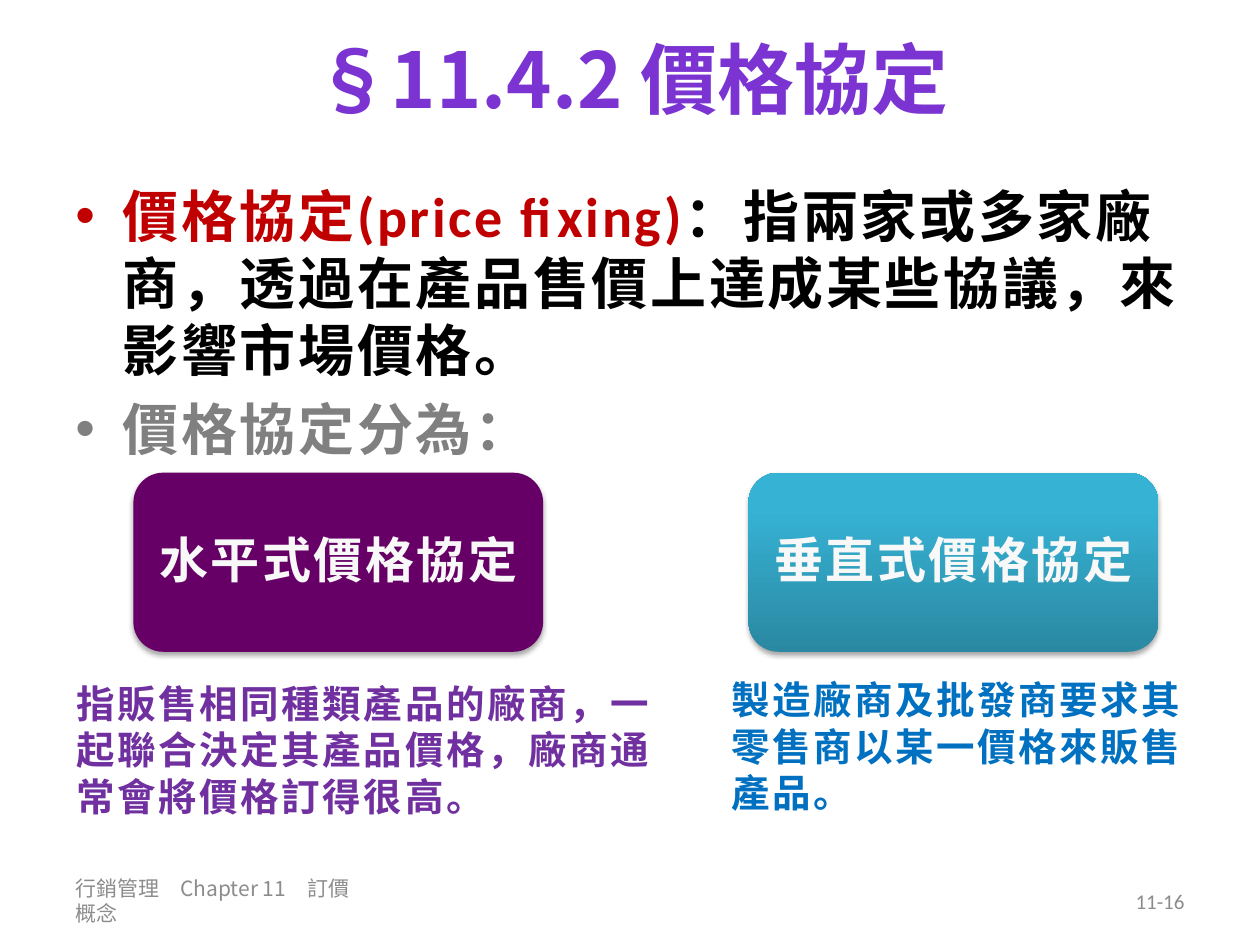
from lxml import etree
from pptx import Presentation
from pptx import util as u
from pptx.dml.color import RGBColor
from pptx.enum import shapes, text
from pptx.oxml import ns

CJK = "Noto Sans CJK SC"
LATIN = "Calibri"


def color(hex_value):
    return RGBColor.from_string(hex_value)


def format_run(run, size, hex_value, latin=LATIN, bold=True, spacing=1.5):
    run.font.size = u.Pt(size)
    run.font.bold = bold
    run.font.name = latin
    run.font.color.rgb = color(hex_value)
    properties = run._r.get_or_add_rPr()
    etree.SubElement(properties, ns.qn("a:ea"), typeface=CJK)
    if spacing:
        properties.set("spc", str(int(spacing * 100)))


presentation = Presentation()
presentation.slide_width = u.Cm(25.4)
presentation.slide_height = u.Cm(19.05)
slide = presentation.slides.add_slide(presentation.slide_layouts[6])

# Title, footer, page number and the two explanations:
# position, text, size, colour, latin font, bold, spacing, alignment, anchor
left, center, right = text.PP_ALIGN.LEFT, text.PP_ALIGN.CENTER, text.PP_ALIGN.RIGHT
top, middle = text.MSO_ANCHOR.TOP, text.MSO_ANCHOR.MIDDLE
text_boxes = [
    ((1.3, 0, 22.86, 3.12), "§11.4.2 價格協定",
     44, "7B34D2", CJK, True, 0, center, middle),
    ((1.27, 17.65, 6.22, 1.02), "行銷管理　Chapter 11　訂價概念",
     12, "8C8C8C", CJK, False, 0, left, middle),
    ((18.21, 17.65, 5.92, 1.02), "11-16",
     12, "8C8C8C", LATIN, False, 0, right, middle),
    ((1.3, 13.59, 12.7, 3.07), "指販售相同種類產品的廠商，一起聯合決定其產品價格，廠商通常會將價格訂得很高。",
     22, "7030A0", LATIN, True, 1.5, left, top),
    ((14.5, 13.51, 10.39, 3.07), "製造廠商及批發商要求其零售商以某一價格來販售產品。",
     22, "0070C0", LATIN, True, 1.5, left, top),
]
for position, words, size, hex_value, latin, bold, spacing, alignment, anchor in text_boxes:
    box = slide.shapes.add_textbox(*map(u.Cm, position))
    frame = box.text_frame
    frame.word_wrap = True
    frame.vertical_anchor = anchor
    frame.text = words
    paragraph = frame.paragraphs[0]
    paragraph.alignment = alignment
    format_run(paragraph.runs[0], size, hex_value, latin, bold, spacing)

# Bulleted definition
bullets = [
    [("價格協定(price fixing)", "C00000"),
     ("：指兩家或多家廠商，透過在產品售價上達成某些協議，來影響市場價格。", "000000")],
    [("價格協定分為：", "808080")],
]
body = slide.shapes.add_textbox(u.Cm(1.27), u.Cm(3.53), u.Cm(22.86), u.Cm(6.4))
frame = body.text_frame
frame.word_wrap = True
for index, parts in enumerate(bullets):
    paragraph = frame.add_paragraph() if index else frame.paragraphs[0]
    if index:
        paragraph.space_before = u.Pt(6.4)
    properties = paragraph._p.get_or_add_pPr()
    properties.set("marL", str(u.Cm(0.95)))
    properties.set("indent", str(-u.Cm(0.95)))
    etree.SubElement(properties, ns.qn("a:buFont"), typeface="Arial")
    etree.SubElement(properties, ns.qn("a:buChar"), char="•")
    for words, hex_value in parts:
        run = paragraph.add_run()
        run.text = words
        format_run(run, 32, hex_value)

# Cards for the two kinds; two colours make a gradient from bottom to top
cards = [
    (2.69, "水平式價格協定", ["660066"]),
    (15.09, "垂直式價格協定", ["2A88A2", "36B2D4"]),
]
for card_left, words, fills in cards:
    card = slide.shapes.add_shape(shapes.MSO_SHAPE.ROUNDED_RECTANGLE,
                                  u.Cm(card_left), u.Cm(9.53), u.Cm(8.26), u.Cm(3.61))
    card.line.fill.background()
    if len(fills) == 1:
        card.fill.solid()
        card.fill.fore_color.rgb = color(fills[0])
    else:
        card.fill.gradient()
        card.fill.gradient_angle = 90
        for stop, hex_value, place in zip(card.fill.gradient_stops, fills, (0, 0.8)):
            stop.color.rgb = color(hex_value)
            stop.position = place

    # Soft shadow below the card
    card.shadow.inherit = False
    effects = card._element.spPr.find(ns.qn("a:effectLst"))
    shadow = etree.SubElement(effects, ns.qn("a:outerShdw"), blurRad=str(u.Pt(3.1)),
                              dist=str(u.Pt(1.8)), dir="5400000", rotWithShape="0")
    shade = etree.SubElement(shadow, ns.qn("a:srgbClr"), val="000000")
    etree.SubElement(shade, ns.qn("a:alpha"), val="35000")

    frame = card.text_frame
    frame.word_wrap = True
    frame.margin_left = frame.margin_right = u.Cm(0.3)
    frame.vertical_anchor = middle
    frame.text = words
    paragraph = frame.paragraphs[0]
    paragraph.alignment = center
    paragraph.line_spacing = 0.9
    format_run(paragraph.runs[0], 28, "F8F8F8", CJK)

presentation.save("out.pptx")
